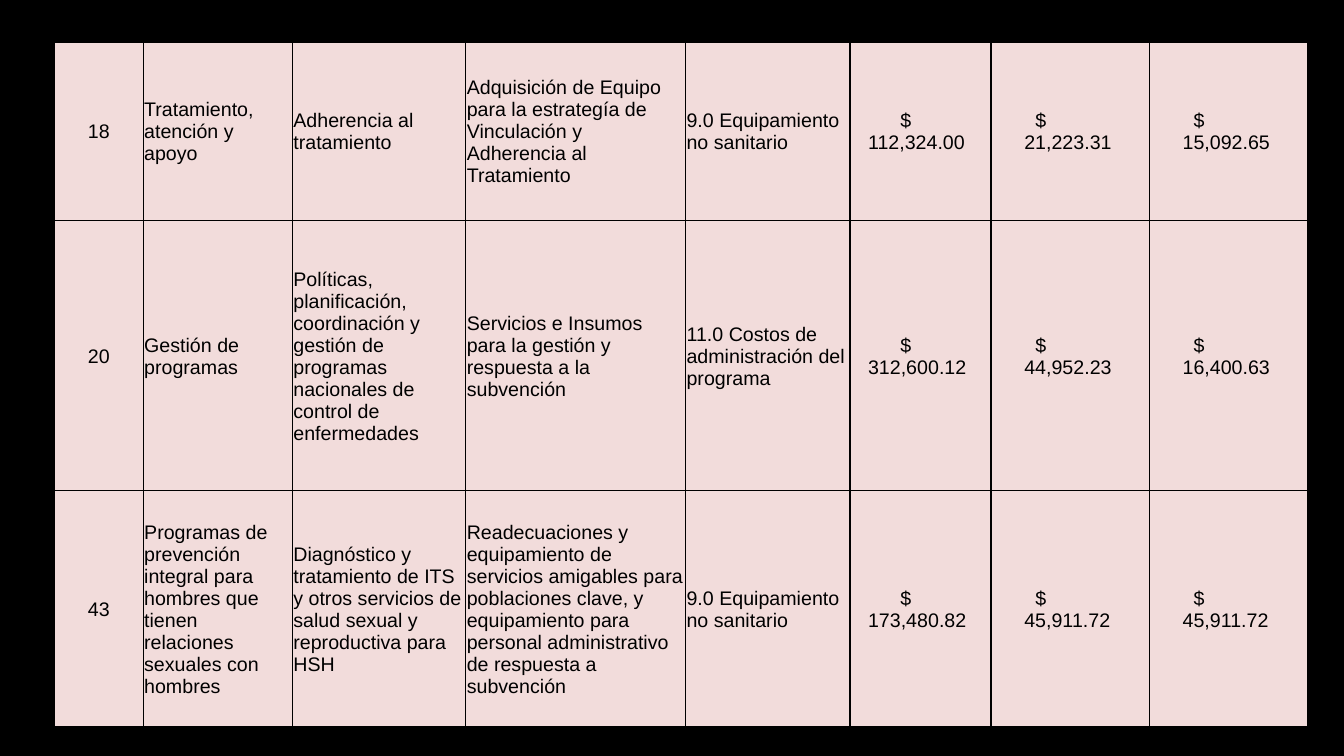
from dataclasses import dataclass

from lxml.etree import SubElement
from pptx import Presentation
from pptx.dml.color import RGBColor
from pptx.enum.text import MSO_ANCHOR, PP_ALIGN
from pptx.oxml.ns import qn
from pptx.util import Inches, Pt


@dataclass(frozen=True)
class Theme:
    background: str = "000000"
    text: str = "000000"
    cell: str = "F2DCDB"
    border: str = "000000"
    font: str = "Arial"
    size: int = 14
    border_width: int = 1
    inset: float = 0.01


COLUMN_WIDTHS = [0.88, 1.48, 1.72, 2.18, 1.63, 1.4, 1.57, 1.57]
ROW_HEIGHTS = [1.77, 2.68, 2.34]
FIRST_AMOUNT_COLUMN = 5
# Left margin of the figure and first-line indent of the currency sign, in inches
AMOUNT_INDENTS = [(0.17, 0.32), (0.32, 0.11), (0.32, 0.11)]

BUDGET_LINES = [
    ["18", "Tratamiento, atención y apoyo", "Adherencia al tratamiento",
     "Adquisición de Equipo para la estrategía de Vinculación y Adherencia al Tratamiento",
     "9.0 Equipamiento no sanitario", "112,324.00", "21,223.31", "15,092.65"],
    ["20", "Gestión de programas",
     "Políticas, planificación, coordinación y gestión de programas nacionales "
     "de control de enfermedades",
     "Servicios e Insumos para la gestión y respuesta a la subvención",
     "11.0 Costos de administración del programa",
     "312,600.12", "44,952.23", "16,400.63"],
    ["43", "Programas de prevención integral para hombres que tienen relaciones "
     "sexuales con hombres",
     "Diagnóstico y tratamiento de ITS y otros servicios de salud sexual y "
     "reproductiva para HSH",
     "Readecuaciones y equipamiento de servicios amigables para poblaciones clave, "
     "y equipamiento para personal administrativo de respuesta a subvención",
     "9.0 Equipamiento no sanitario", "173,480.82", "45,911.72", "45,911.72"],
]


class SlideBuilder:
    def __init__(self, slide, theme):
        self.slide = slide
        self.theme = theme

    def background(self):
        fill = self.slide.background.fill
        fill.solid()
        fill.fore_color.rgb = RGBColor.from_string(self.theme.background)

    def run(self, paragraph, text):
        run = paragraph.add_run()
        run.text = text
        run.font.name = self.theme.font
        run.font.size = Pt(self.theme.size)
        run.font.color.rgb = RGBColor.from_string(self.theme.text)

    def amount(self, paragraph, figure, margin, indent):
        """Set the currency sign above its figure, indented on the first line."""
        paragraph.alignment = PP_ALIGN.LEFT
        properties = paragraph._p.get_or_add_pPr()
        properties.set("marL", str(Inches(margin)))
        properties.set("indent", str(Inches(indent)))
        self.run(paragraph, "$")
        paragraph.add_line_break()
        self.run(paragraph, figure)

    def borders(self, cell):
        properties = cell._tc.get_or_add_tcPr()
        for side in ("a:lnL", "a:lnR", "a:lnT", "a:lnB"):
            line = SubElement(properties, qn(side), w=str(Pt(self.theme.border_width)))
            fill = SubElement(line, qn("a:solidFill"))
            SubElement(fill, qn("a:srgbClr"), val=self.theme.border)

    def format_cell(self, cell):
        self.borders(cell)
        cell.fill.solid()
        cell.fill.fore_color.rgb = RGBColor.from_string(self.theme.cell)
        cell.vertical_anchor = MSO_ANCHOR.MIDDLE
        cell.margin_left = cell.margin_right = cell.margin_top = Inches(self.theme.inset)
        cell.margin_bottom = 0

    def budget_table(self, left, top):
        table = self.slide.shapes.add_table(
            len(ROW_HEIGHTS), len(COLUMN_WIDTHS), Inches(left), Inches(top),
            Inches(sum(COLUMN_WIDTHS)), Inches(sum(ROW_HEIGHTS))).table
        table.first_row = table.horz_banding = False
        for column, width in zip(table.columns, COLUMN_WIDTHS):
            column.width = Inches(width)
        for row, height, entries in zip(table.rows, ROW_HEIGHTS, BUDGET_LINES):
            row.height = Inches(height)
            for index, (cell, entry) in enumerate(zip(row.cells, entries)):
                self.format_cell(cell)
                paragraph = cell.text_frame.paragraphs[0]
                if index >= FIRST_AMOUNT_COLUMN:
                    margin, indent = AMOUNT_INDENTS[index - FIRST_AMOUNT_COLUMN]
                    self.amount(paragraph, entry, margin, indent)
                else:
                    paragraph.alignment = PP_ALIGN.LEFT if index else PP_ALIGN.CENTER
                    self.run(paragraph, entry)


def main():
    presentation = Presentation()
    presentation.slide_width = Inches(13.33)
    presentation.slide_height = Inches(7.5)
    blank_layout = presentation.slide_layouts[6]
    builder = SlideBuilder(presentation.slides.add_slide(blank_layout), Theme())
    builder.background()
    builder.budget_table(0.54, 0.42)
    presentation.save("out.pptx")


if __name__ == "__main__":
    main()
